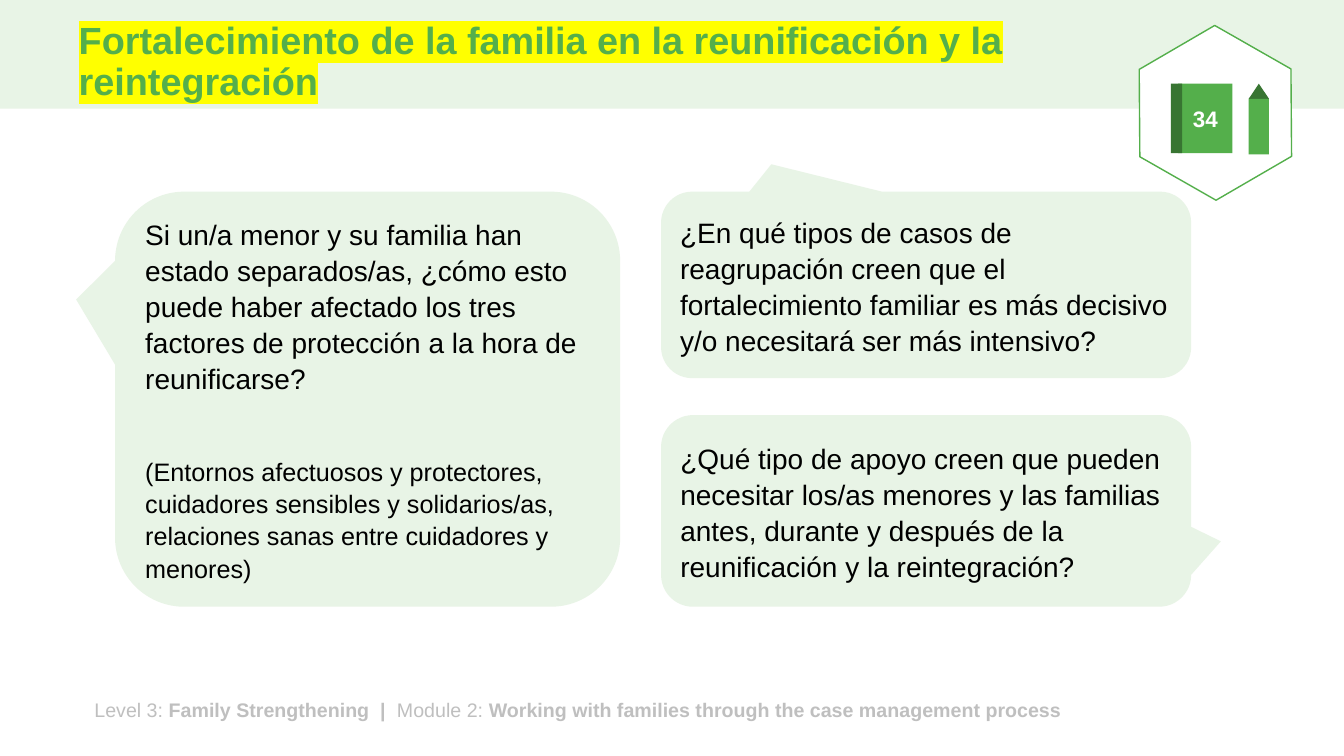
from dataclasses import dataclass
from lxml import etree
from pptx import Presentation
from pptx.dml.color import RGBColor
from pptx.enum.shapes import MSO_SHAPE
from pptx.enum.text import MSO_ANCHOR, MSO_AUTO_SIZE, PP_ALIGN
from pptx.oxml.ns import qn
from pptx.util import Cm, Pt

RECT = MSO_SHAPE.RECTANGLE
HEX = MSO_SHAPE.HEXAGON
TIP = MSO_SHAPE.ISOSCELES_TRIANGLE
CALL = MSO_SHAPE.ROUNDED_RECTANGULAR_CALLOUT
MIDDLE = MSO_ANCHOR.MIDDLE
LEFT, CENTER = PP_ALIGN.LEFT, PP_ALIGN.CENTER


@dataclass
class Theme:
    font: str = "Arial"
    pale: str = "E8F4E6"
    green: str = "54AF4B"
    dark: str = "387532"
    gray: str = "BFBFBF"
    black: str = "000000"
    white: str = "FFFFFF"
    mark: str = "FFFF00"
    head: int = 27
    body: int = 20
    note: int = 18
    badge: int = 16
    foot: int = 14


theme = Theme()


def add_box(shapes, kind, box, fill):
    shape = shapes.add_shape(kind, *[Cm(n) for n in box])
    shape.shadow.inherit = False
    shape.fill.solid()
    shape.fill.fore_color.rgb = RGBColor.from_string(fill)
    shape.line.fill.background()
    return shape


def add_run(para, text, size, color, bold=False):
    run = para.add_run()
    run.text = text
    run.font.name = theme.font
    run.font.size = Pt(size)
    run.font.bold = bold
    run.font.color.rgb = RGBColor.from_string(color)
    return run


deck = Presentation()
deck.slide_width, deck.slide_height = Cm(33.87), Cm(19.05)
slide = deck.slides.add_slide(deck.slide_layouts[5])
shapes = slide.shapes

# Header band
add_box(shapes, RECT, (0, 0, 33.87, 2.74), theme.pale)

# Footer
foot = shapes.add_textbox(Cm(2.13), Cm(17.45), Cm(26.97), Cm(0.86))
foot.text_frame.word_wrap = True
parts = [
    ("Level 3: ", False),
    ("Family Strengthening  |  ", True),
    ("Module 2: ", False),
    ("Working with families through the case management process", True),
]
for text, bold in parts:
    add_run(foot.text_frame.paragraphs[0], text, theme.foot, theme.gray, bold)

# Title, placed above the band
title = shapes.title
title.left, title.top, title.width, title.height = Cm(1.73), Cm(0.38), Cm(29.21), Cm(2.41)
frame = title.text_frame
frame.auto_size = MSO_AUTO_SIZE.NONE
frame.vertical_anchor = MIDDLE
para = frame.paragraphs[0]
para.alignment = LEFT
para.line_spacing = 0.9
run = add_run(para, "Fortalecimiento de la familia en la reunificación y la reintegración",
              theme.head, theme.green, True)
light = etree.Element(qn("a:highlight"))
etree.SubElement(light, qn("a:srgbClr"), val=theme.mark)
run.font._element.find(qn("a:solidFill")).addnext(light)
foot._element.addnext(title._element)

# Page badge: hexagon, book and pencil
badge = shapes.add_group_shape().shapes
cell = add_box(badge, HEX, (28.42, 0.94, 4.42, 3.81), theme.white)
cell.adjustments[0] = 0.29
cell.rotation = 29.7
cell.line.color.rgb = RGBColor.from_string(theme.green)
cell.line.width = Pt(1)
book = add_box(badge, RECT, (29.69, 2.11, 1.37, 1.75), theme.green)
book.text_frame.word_wrap = False
book.text_frame.vertical_anchor = MIDDLE
para = book.text_frame.paragraphs[0]
para.alignment = CENTER
add_run(para, "34", theme.badge, theme.white, True)
add_box(badge, RECT, (29.51, 2.11, 0.28, 1.75), theme.dark)
add_box(badge, TIP, (31.47, 2.11, 0.51, 0.38), theme.dark)
add_box(badge, RECT, (31.47, 2.49, 0.51, 1.4), theme.green)

# Question callouts: box, pointer, then text, size and space before
calls = [
    ((2.9, 4.83, 12.73, 10.46), (-0.577, -0.24), [
        ("Si un/a menor y su familia han estado separados/as, ¿cómo esto puede haber "
         "afectado los tres factores de protección a la hora de reunificarse?",
         theme.body, 0),
        ("(Entornos afectuosos y protectores, cuidadores sensibles y solidarios/as, "
         "relaciones sanas entre cuidadores y menores)", theme.note, 34),
    ]),
    ((16.66, 4.83, 13.36, 4.7), (-0.292, -0.647), [
        ("¿En qué tipos de casos de reagrupación creen que el fortalecimiento familiar "
         "es más decisivo y/o necesitará ser más intensivo?", theme.body, 0),
    ]),
    ((16.66, 10.46, 13.36, 4.83), (0.556, 0.159), [
        ("¿Qué tipo de apoyo creen que pueden necesitar los/as menores y las familias "
         "antes, durante y después de la reunificación y la reintegración?",
         theme.body, 0),
    ]),
]
for box, point, texts in calls:
    call = add_box(shapes, CALL, box, theme.pale)
    call.adjustments[0], call.adjustments[1] = point
    frame = call.text_frame
    frame.word_wrap = True
    frame.vertical_anchor = MIDDLE
    for i, (text, size, gap) in enumerate(texts):
        para = frame.add_paragraph() if i else frame.paragraphs[0]
        para.alignment = LEFT
        para.line_spacing = 1.07
        para.space_before, para.space_after = Pt(gap), Pt(8)
        add_run(para, text, size, theme.black)

deck.save("out.pptx")
